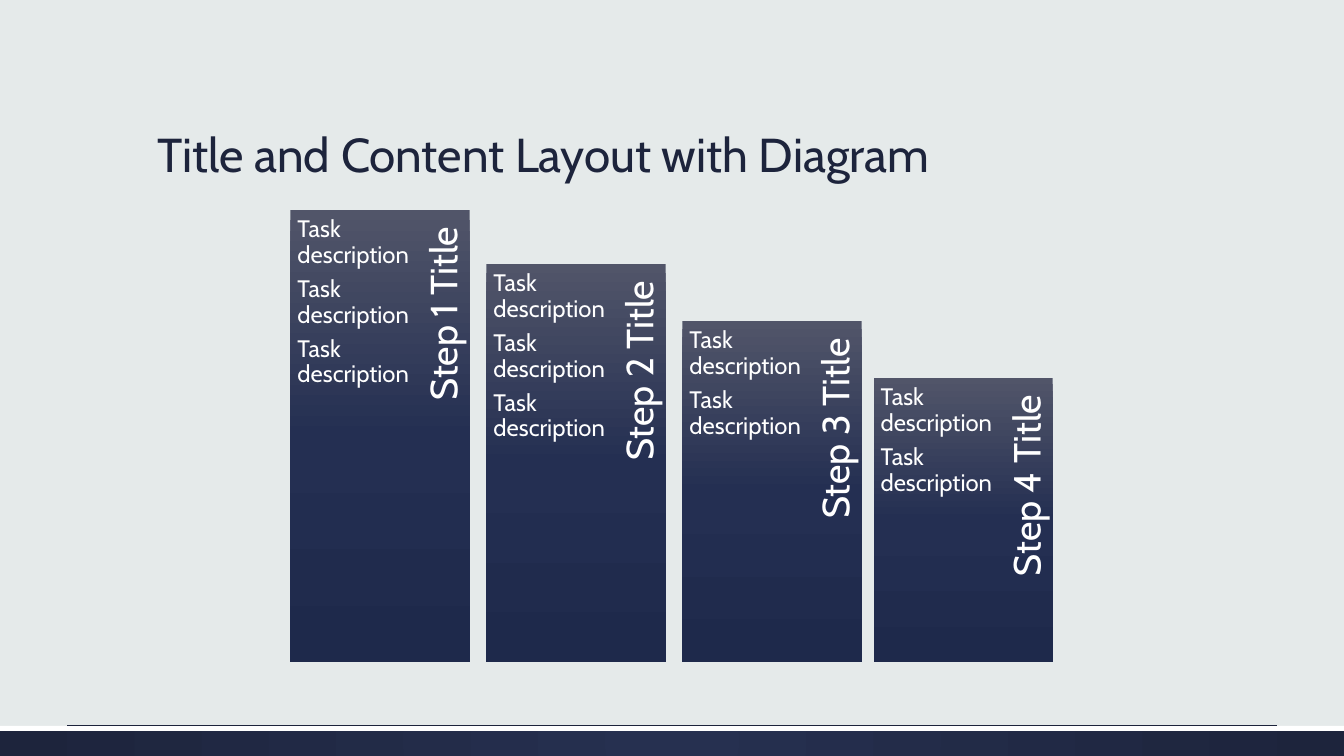
"""Build a slide of four descending step columns with a title and footer band."""
from dataclasses import dataclass

from pptx import Presentation, oxml
from pptx.dml.color import RGBColor
from pptx.enum import shapes, text
from pptx.oxml import ns
from pptx.util import Pt

FONT = "Cabin"
NAVY = "1D243C"
WHITE = "FFFFFF"
COLUMN_STOPS = ((0, "515569"), (50, "242F52"), (100, "1E294B"))
BAND_STOPS = ((0, "263050"), (100, NAVY))
DOWNWARD = '<a:lin ang="5400000" scaled="0"/>'
FROM_CENTRE = ('<a:path path="circle"><a:fillToRect l="50000" t="50000" '
               'r="50000" b="50000"/></a:path>')
SLIDE_WIDTH, SLIDE_HEIGHT = 960, 540
COLUMN_WIDTH, COLUMN_BOTTOM = 128, 473
DESCRIPTION_WIDTH = 90.5
LABEL_THICKNESS, LABEL_CENTRE = 33, 112


@dataclass(frozen=True)
class Box:
    left: float
    top: float
    width: float
    height: float

    def lengths(self) -> tuple:
        return Pt(self.left), Pt(self.top), Pt(self.width), Pt(self.height)


@dataclass(frozen=True)
class TextStyle:
    size: float
    color: str
    insets: tuple = (7.2, 3.6, 7.2, 3.6)
    anchor: text.MSO_ANCHOR = text.MSO_ANCHOR.TOP
    align: text.PP_ALIGN = text.PP_ALIGN.LEFT
    space_after: float = 0


@dataclass(frozen=True)
class Step:
    title: str
    left: float
    top: float
    tasks: int


TITLE = TextStyle(34, NAVY, anchor=text.MSO_ANCHOR.BOTTOM)
LABEL = TextStyle(27, WHITE, (8, 0, 12, 3), text.MSO_ANCHOR.MIDDLE, text.PP_ALIGN.RIGHT)
DESCRIPTION = TextStyle(17, WHITE, (5, 5, 5, 5), space_after=6)
STEPS = (
    Step("Step 1 Title", 207.5, 150, 3),
    Step("Step 2 Title", 347.5, 188.5, 3),
    Step("Step 3 Title", 487.5, 229.5, 2),
    Step("Step 4 Title", 624, 270, 2),
)


def rgb(color: str) -> RGBColor:
    return RGBColor.from_string(color)


def add_rectangle(slide, box: Box):
    shape = slide.shapes.add_shape(shapes.MSO_SHAPE.RECTANGLE, *box.lengths())
    shape.shadow.inherit = False
    shape.line.fill.background()
    return shape


def add_gradient_rectangle(slide, box: Box, stops: tuple, direction: str) -> None:
    shape = add_rectangle(slide, box)
    stop_list = "".join(
        f'<a:gs pos="{position * 1000}"><a:srgbClr val="{color}"/></a:gs>'
        for position, color in stops)
    shape.fill.gradient()
    gradient = shape._element.spPr.find(ns.qn("a:gradFill"))
    gradient.getparent().replace(gradient, oxml.parse_xml(
        f'<a:gradFill {ns.nsdecls("a")} rotWithShape="1">'
        f'<a:gsLst>{stop_list}</a:gsLst>{direction}</a:gradFill>'))


def add_text(slide, box: Box, lines: list[str], style: TextStyle, rotation: float = 0) -> None:
    shape = slide.shapes.add_textbox(*box.lengths())
    shape.rotation = rotation
    frame = shape.text_frame
    frame.word_wrap = True
    frame.vertical_anchor = style.anchor
    (frame.margin_left, frame.margin_top,
     frame.margin_right, frame.margin_bottom) = map(Pt, style.insets)
    for index, line in enumerate(lines):
        paragraph = frame.add_paragraph() if index else frame.paragraphs[0]
        paragraph.alignment = style.align
        paragraph.line_spacing = 0.9
        paragraph.space_after = Pt(style.space_after)
        run = paragraph.add_run()
        run.text = line
        run.font.name = FONT
        run.font.size = Pt(style.size)
        run.font.color.rgb = rgb(style.color)


def add_step(slide, step: Step) -> None:
    height = COLUMN_BOTTOM - step.top
    add_gradient_rectangle(slide, Box(step.left, step.top, COLUMN_WIDTH, height),
                           COLUMN_STOPS, DOWNWARD)
    length = 0.9 * height
    label_box = Box(round(step.left + LABEL_CENTRE - length / 2, 2),
                    round(step.top + (length - LABEL_THICKNESS) / 2, 2),
                    length, LABEL_THICKNESS)
    add_text(slide, label_box, [step.title], LABEL, rotation=270)
    add_text(slide, Box(step.left, step.top, DESCRIPTION_WIDTH, height),
             ["Task description"] * step.tasks, DESCRIPTION)


def add_footer(slide) -> None:
    add_gradient_rectangle(slide, Box(0, 518.4, SLIDE_WIDTH, 21.6), BAND_STOPS, FROM_CENTRE)
    stripe = add_rectangle(slide, Box(0, 518.4, SLIDE_WIDTH, 3.6))
    stripe.fill.solid()
    stripe.fill.fore_color.rgb = rgb(WHITE)
    rule = slide.shapes.add_connector(
        shapes.MSO_CONNECTOR.STRAIGHT, Pt(48), Pt(518), Pt(912), Pt(518))
    rule.line.color.rgb = rgb(NAVY)
    rule.line.width = Pt(0.5)
    rule._element.spPr.append(oxml.parse_xml(f'<a:effectLst {ns.nsdecls("a")}/>'))


def main() -> None:
    presentation = Presentation()
    presentation.slide_width, presentation.slide_height = Pt(SLIDE_WIDTH), Pt(SLIDE_HEIGHT)
    slide = presentation.slides.add_slide(presentation.slide_layouts[6])
    slide.background.fill.solid()
    slide.background.fill.fore_color.rgb = rgb("E5EAEA")
    add_footer(slide)
    add_text(slide, Box(105.5, 36.5, 749, 97.5), ["Title and Content Layout with Diagram"], TITLE)
    for step in STEPS:
        add_step(slide, step)
    presentation.save("out.pptx")


if __name__ == "__main__":
    main()
